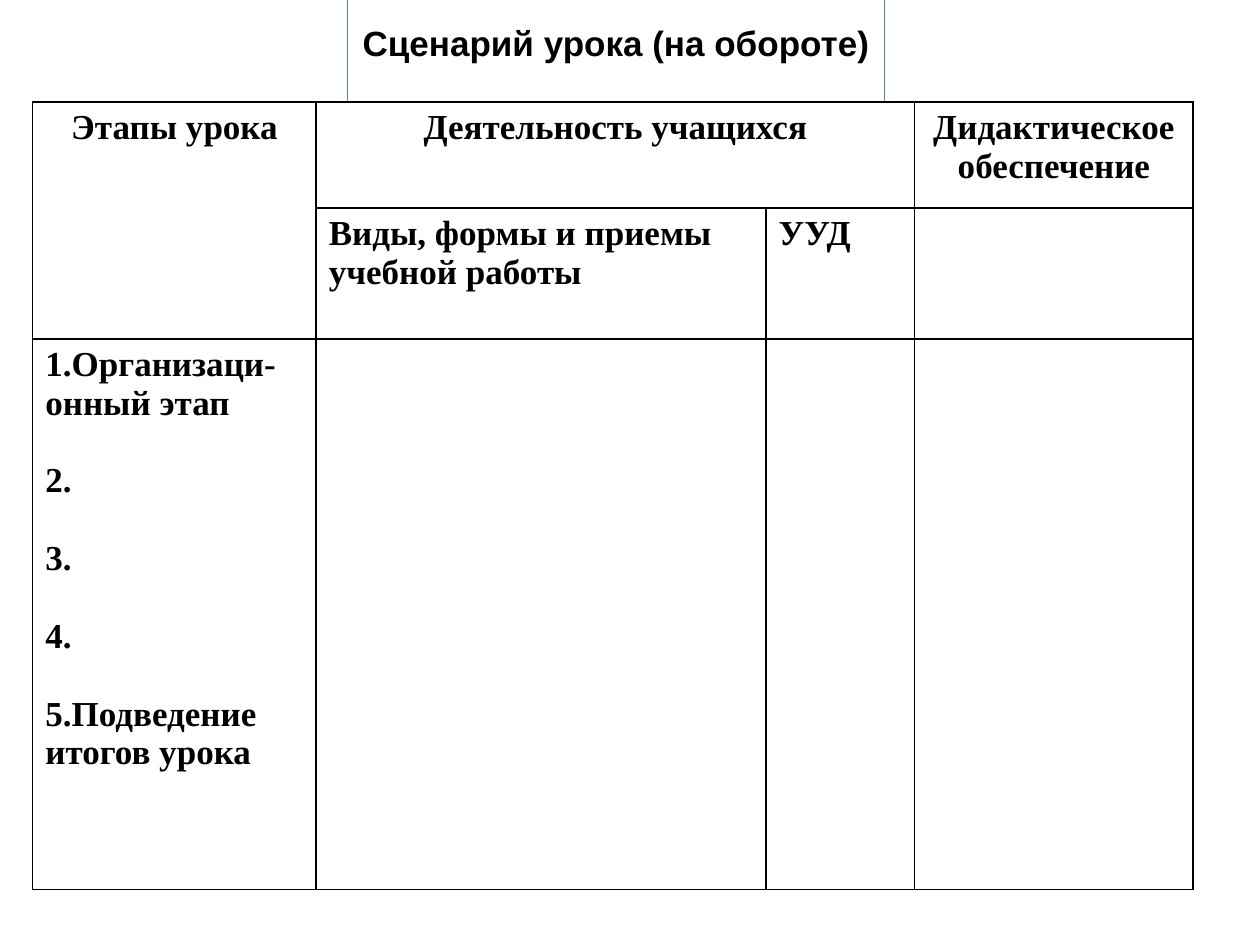
from dataclasses import dataclass

from lxml import etree
from pptx import Presentation
from pptx.dml.color import RGBColor
from pptx.enum import text
from pptx.oxml import ns
from pptx.util import Inches, Pt


@dataclass(frozen=True)
class Theme:
    ink: RGBColor = RGBColor(0x00, 0x00, 0x00)
    paper: RGBColor = RGBColor(0xFF, 0xFF, 0xFF)
    title_line: RGBColor = RGBColor(0x4F, 0x81, 0xBD)
    title_font: str = "Arial"
    table_font: str = "Times New Roman"
    size: Pt = Pt(20)
    stage_gap: Pt = Pt(22.2)
    border: Pt = Pt(1)


theme = Theme()


def format_paragraph(paragraph, font_name, alignment):
    paragraph.alignment = alignment
    for run in paragraph.runs:
        run.font.name = font_name
        run.font.size = theme.size
        run.font.bold = True
        run.font.color.rgb = theme.ink


def add_borders(cell):
    properties = cell._tc.get_or_add_tcPr()
    for side in ("a:lnL", "a:lnR", "a:lnT", "a:lnB"):
        line = etree.SubElement(properties, ns.qn(side), w=str(theme.border))
        fill = etree.SubElement(line, ns.qn("a:solidFill"))
        etree.SubElement(fill, ns.qn("a:srgbClr"), val=str(theme.ink))


presentation = Presentation()
presentation.slide_width, presentation.slide_height = Inches(10), Inches(7.5)
slide = presentation.slides.add_slide(presentation.slide_layouts[5])

# Title
title = slide.shapes.title
title.left, title.top = Inches(2.76), Inches(0.12)
title.width, title.height = Inches(4.26), Inches(0.44)
title.fill.solid()
title.fill.fore_color.rgb = theme.paper
title.line.color.rgb = theme.title_line
title.line.width = Pt(0.75)
title_frame = title.text_frame
title_frame.text = "Сценарий урока (на обороте)"
title_frame.word_wrap = False
title_frame.auto_size = text.MSO_AUTO_SIZE.SHAPE_TO_FIT_TEXT
title_frame.vertical_anchor = text.MSO_ANCHOR.MIDDLE
format_paragraph(title_frame.paragraphs[0], theme.title_font, text.PP_ALIGN.CENTER)

# Lesson plan table
column_widths = (2.25, 3.57, 1.18, 2.21)
row_heights = (0.84, 1.04, 4.37)
table = slide.shapes.add_table(
    len(row_heights), len(column_widths), Inches(0.26), Inches(0.81),
    Inches(sum(column_widths)), Inches(sum(row_heights))).table
table.horz_banding = False
for column, width in zip(table.columns, column_widths):
    column.width = Inches(width)
for row, height in zip(table.rows, row_heights):
    row.height = Inches(height)
for cell in table.iter_cells():
    add_borders(cell)
    cell.fill.solid()
    cell.fill.fore_color.rgb = theme.paper

table.cell(0, 0).merge(table.cell(1, 0))
table.cell(0, 1).merge(table.cell(0, 2))

stages = ("1.Организаци-онный этап", "2.", "3.", "4.", "5.Подведение итогов урока")
contents = {
    (0, 0): "Этапы урока",
    (0, 1): "Деятельность учащихся",
    (0, 3): "Дидактическое обеспечение",
    (1, 1): "Виды, формы и приемы учебной работы",
    (1, 2): "УУД",
    (2, 0): "\n".join(stages),
}
for (row_index, column_index), wording in contents.items():
    frame = table.cell(row_index, column_index).text_frame
    frame.text = wording
    alignment = text.PP_ALIGN.LEFT if row_index else text.PP_ALIGN.CENTER
    for paragraph in frame.paragraphs:
        format_paragraph(paragraph, theme.table_font, alignment)
    for paragraph in frame.paragraphs[1:]:
        paragraph.space_before = theme.stage_gap

presentation.save("out.pptx")
